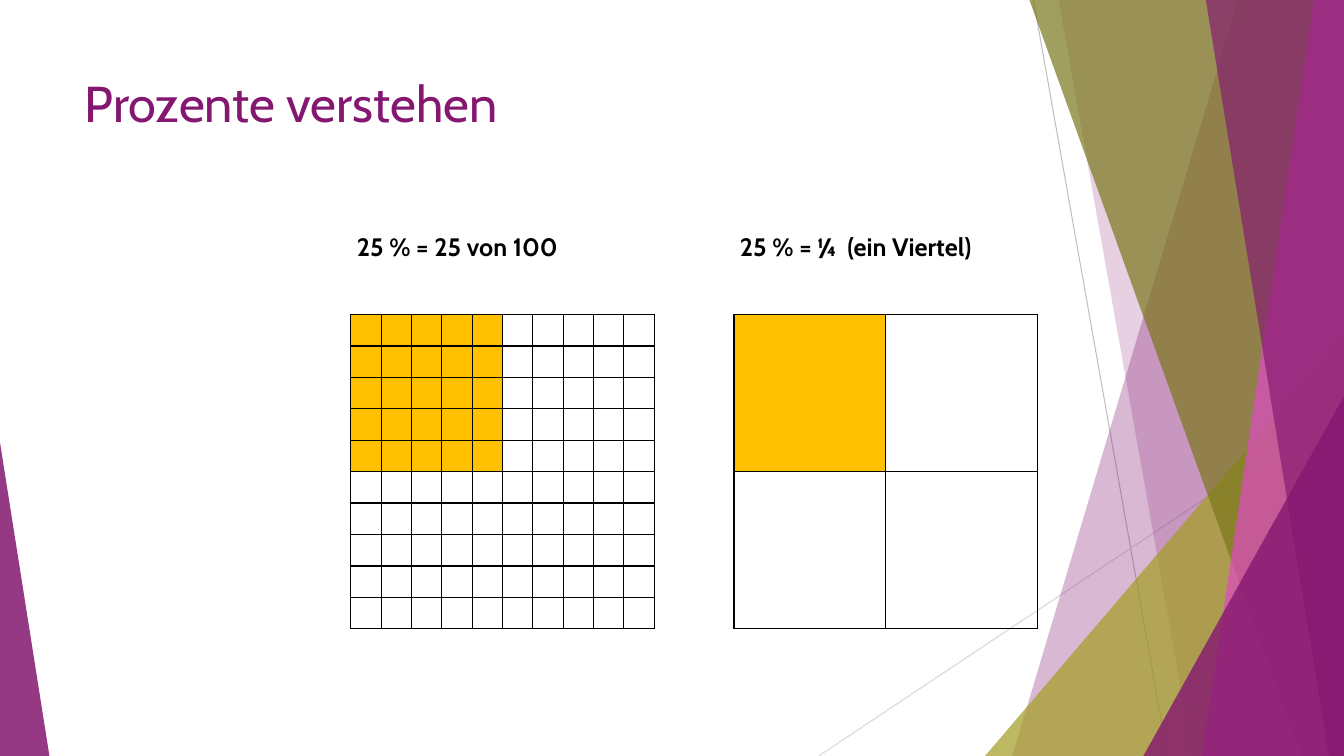
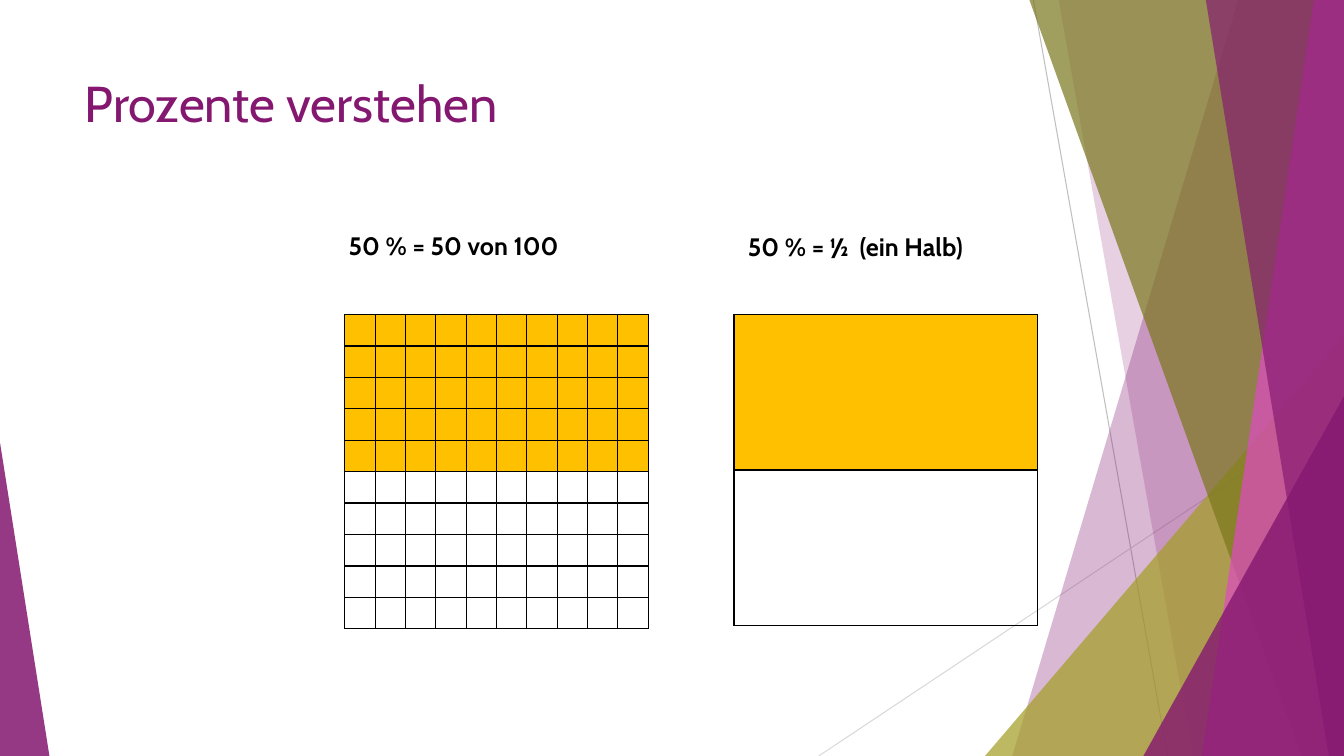
from lxml.etree import SubElement
from pptx import Presentation
from pptx.dml.color import RGBColor
from pptx.enum.shapes import MSO_CONNECTOR, MSO_SHAPE
from pptx.enum.text import MSO_ANCHOR, PP_ALIGN
from pptx.oxml.ns import qn
from pptx.util import Inches, Pt

WIDTH, HEIGHT = 13.33, 7.5
FONT = "Cabin"
PURPLE, OLIVE, DARK_OLIVE, PINK = "841770", "A39E26", "7A771C", "DF4AC4"
BLACK, YELLOW = "000000", "FFC000"
TITLE_BOX = (0.74, 0.67, 9.4, 1.44)
CELLS = 10
GRID_TOP, GRID_WIDTH, GRID_HEIGHT = 3.12, 3.01, 3.12

THIN_LINES = [
    ((10.25, 0), (11.58, HEIGHT), "BFBFBF"),
    ((WIDTH, 4.03), (8.12, HEIGHT), "D9D9D9"),
]
FACETS = [
    ("band", (12.28, 10.04), PURPLE, 30),
    ("band", (10.5, 11.83), PURPLE, 20),
    ("triangle", (9.77, 3.33, 3.56, 1), OLIVE, 72),
    ("band", (10.21, 12.91), DARK_OLIVE, 70),
    ("band", (13.03, 11.92), PINK, 70),
    ("band", (11.96, 13.18), PURPLE, 65),
    ("triangle", (11.34, 3.93, 1.99, 1), PURPLE, 80),
    ("triangle", (0, 4.39, 0.49, 0), PURPLE, 85),
]
SLIDES = [
    {
        "title": "Prozente verstehen",
        "filled": (5, 5),
        "grids": [
            {"left": 3.48, "height": GRID_HEIGHT, "block": (1, 1),
             "caption": "25 % = 25 von 100", "caption_box": (3.44, 2.25, 3.21, 0.4)},
            {"left": 7.28, "height": GRID_HEIGHT, "block": (5, 5),
             "caption": "25 % = ¼  (ein Viertel)", "caption_box": (7.24, 2.25, 3.21, 0.4)},
        ],
    },
    {
        "title": "Prozente verstehen",
        "filled": (5, 10),
        "grids": [
            {"left": 3.42, "height": GRID_HEIGHT, "block": (1, 1),
             "caption": "50 % = 50 von 100", "caption_box": (3.36, 2.24, 2.81, 0.4)},
            {"left": 7.28, "height": 3.09, "block": (5, 10),
             "caption": "50 % = ½  (ein Halb)", "caption_box": (7.32, 2.25, 3.44, 0.4)},
        ],
    },
]


def colour(value):
    return RGBColor.from_string(value)


def inches(values):
    return [Inches(value) for value in values]


def set_font(para, size, value, bold=False):
    para.font.name = FONT
    para.font.size = Pt(size)
    para.font.bold = bold
    para.font.color.rgb = colour(value)


def add_thin_line(page, start, end, value):
    line = page.shapes.add_connector(MSO_CONNECTOR.STRAIGHT, *inches(start + end))
    line.line.color.rgb = colour(value)
    line.line.width = Pt(0.75)
    SubElement(line.element.spPr, qn("a:effectLst"))
    return line


def add_facet(page, kind, outline, value, opacity):
    if kind == "band":
        top_left, bottom_left = outline
        corners = [(WIDTH, 0), (WIDTH, HEIGHT), (bottom_left, HEIGHT)]
        builder = page.shapes.build_freeform(Inches(top_left), 0)
        builder.add_line_segments([inches(corner) for corner in corners], close=True)
        shape = builder.convert_to_shape()
    else:
        left, top, width, apex = outline
        box = inches((left, top, width, HEIGHT - top))
        shape = page.shapes.add_shape(MSO_SHAPE.ISOSCELES_TRIANGLE, *box)
        shape.adjustments[0] = apex
    shape.shadow.inherit = False
    shape.fill.solid()
    shape.fill.fore_color.rgb = colour(value)
    fill = shape.element.spPr.find(qn("a:solidFill"))
    SubElement(fill[0], qn("a:alpha"), val=str(opacity * 1000))
    shape.line.fill.background()
    return shape


def add_background(layout, page):
    decor = [add_thin_line(page, *line) for line in THIN_LINES]
    decor += [add_facet(page, *facet) for facet in FACETS]
    for number, shape in enumerate(decor, 100):
        shape.element[0][0].set("id", str(number))
        layout.shapes.element.append(shape.element)


def add_border(properties, side, visible):
    line = SubElement(properties, qn("a:ln" + side), w=str(Pt(1)))
    if visible:
        fill = SubElement(line, qn("a:solidFill"))
        SubElement(fill, qn("a:srgbClr"), val=BLACK)
    else:
        SubElement(line, qn("a:noFill"))


def add_grid(page, left, height, block, filled):
    box = inches((left, GRID_TOP, GRID_WIDTH, height))
    frame = page.shapes.add_table(CELLS, CELLS, *box)
    table = frame.table
    table.first_row = table.horz_banding = False
    for column in table.columns:
        column.width = Inches(GRID_WIDTH / CELLS)
    for row in table.rows:
        row.height = Inches(height / CELLS)
    block_rows, block_columns = block
    for index, element in enumerate(frame.element.iter(qn("a:tc"))):
        row, column = divmod(index, CELLS)
        cell = table.cell(row, column)
        cell.margin_left = cell.margin_right = cell.margin_top = cell.margin_bottom = 0
        set_font(cell.text_frame.paragraphs[0], 10, BLACK)
        properties = element.get_or_add_tcPr()
        add_border(properties, "L", column % block_columns == 0)
        add_border(properties, "R", (column + 1) % block_columns == 0)
        add_border(properties, "T", row % block_rows == 0)
        add_border(properties, "B", (row + 1) % block_rows == 0)
        if row < filled[0] and column < filled[1]:
            cell.fill.solid()
            cell.fill.fore_color.rgb = colour(YELLOW)
        else:
            cell.fill.background()


def add_caption(page, text, box):
    frame = page.shapes.add_textbox(*inches(box)).text_frame
    frame.word_wrap = True
    frame.text = text
    set_font(frame.paragraphs[0], 18, BLACK, bold=True)


def fill_page(page, content):
    title = page.shapes.title
    title.text_frame.text = content["title"]
    title.text_frame.vertical_anchor = MSO_ANCHOR.TOP
    para = title.text_frame.paragraphs[0]
    para.alignment = PP_ALIGN.LEFT
    set_font(para, 36, PURPLE)
    for grid in content["grids"]:
        add_grid(page, grid["left"], grid["height"], grid["block"], content["filled"])
        add_caption(page, grid["caption"], grid["caption_box"])


def main():
    deck = Presentation()
    deck.slide_width, deck.slide_height = inches((WIDTH, HEIGHT))
    layout = deck.slide_layouts.get_by_name("Title Only")
    title = layout.placeholders[0]
    title.left, title.top, title.width, title.height = inches(TITLE_BOX)
    pages = [deck.slides.add_slide(layout) for _ in SLIDES]
    add_background(layout, pages[0])
    for page, content in zip(pages, SLIDES):
        fill_page(page, content)
    deck.save("out.pptx")


if __name__ == "__main__":
    main()
